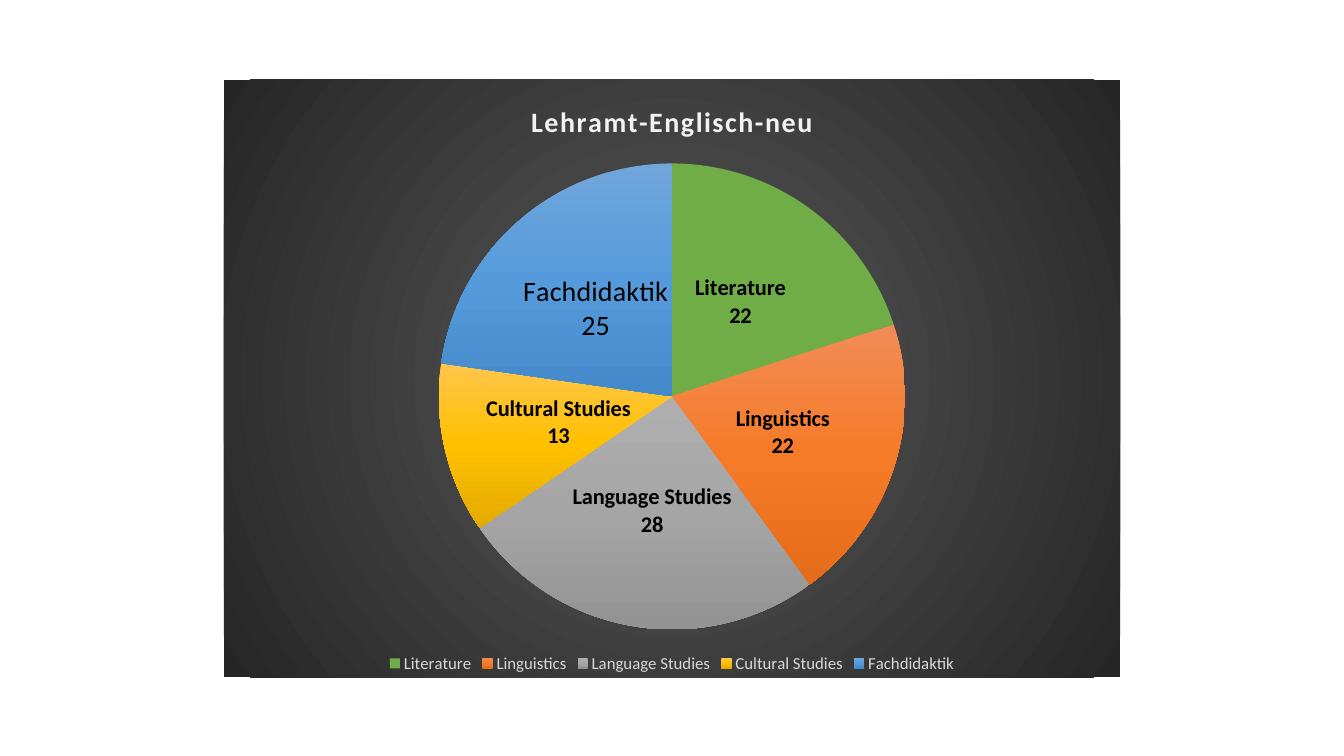
from dataclasses import dataclass

from pptx import Presentation
from pptx.chart.data import CategoryChartData
from pptx.dml.color import RGBColor
from pptx.enum.chart import XL_CHART_TYPE, XL_LABEL_POSITION, XL_LEGEND_POSITION
from pptx.oxml import parse_xml
from pptx.oxml.ns import nsdecls
from pptx.util import Inches, Pt

PIE = XL_CHART_TYPE.PIE
LABEL_CENTER = XL_LABEL_POSITION.CENTER
LEGEND_BOTTOM = XL_LEGEND_POSITION.BOTTOM


@dataclass(frozen=True)
class Theme:
    font: str = "Calibri"
    title_color: str = "F2F2F2"
    legend_color: str = "D9D9D9"
    label_color: str = "000000"
    backdrop: tuple = ("595959", "262626")
    base_size: int = 10
    legend_size: int = 12
    bold_label_size: int = 16
    label_size: int = 20
    title_size: int = 20
    title_spacing: int = 100


SUBJECTS = [
    ("Literature", 22, ("70AD47",)),
    ("Linguistics", 22, ("F18C57", "F67B28", "E56C19")),
    ("Language Studies", 28, ("AFAFAF", "A5A5A5", "939393")),
    ("Cultural Studies", 13, ("FFC64B", "FFC000", "E3AB00")),
    ("Fachdidaktik", 25, ("71A6DB", "559BDB", "448ACA")),
]
PLAIN_SUBJECT = "Fachdidaktik"
PIE_AREA = {"x": 0.24, "y": 0.14, "w": 0.52, "h": 0.78}
LINEAR = '<a:lin ang="5400000" scaled="0"/>'
RADIAL = ('<a:path path="circle"><a:fillToRect l="50000" t="50000" '
          'r="50000" b="50000"/></a:path>')


def gradient(colors, direction):
    step = 100000 // (len(colors) - 1)
    stops = "".join(
        f'<a:gs pos="{i * step}"><a:srgbClr val="{color}"/></a:gs>'
        for i, color in enumerate(colors)
    )
    return parse_xml(f'<a:gradFill {nsdecls("a")} rotWithShape="1">'
                     f'<a:gsLst>{stops}</a:gsLst>{direction}</a:gradFill>')


class SlideBuilder:
    def __init__(self, slide, theme):
        self.slide = slide
        self.theme = theme

    def style(self, font, size, color, bold=False):
        font.name = self.theme.font
        font.size = Pt(size)
        font.bold = bold
        font.color.rgb = RGBColor.from_string(color)

    def pie(self, title, subjects, left, top, width, height):
        data = CategoryChartData()
        data.categories = [name for name, _, _ in subjects]
        data.add_series("Series 1", [points for _, points, _ in subjects])
        chart = self.slide.shapes.add_chart(
            PIE, Inches(left), Inches(top), Inches(width), Inches(height), data
        ).chart
        self.style(chart.font, self.theme.base_size, self.theme.label_color)
        self.backdrop(chart)
        self.title(chart, title)
        self.legend(chart)
        self.labels(chart)
        for index, subject in enumerate(subjects):
            self.slice(chart, index, *subject)
        self.place_pie(chart)

    def backdrop(self, chart):
        properties = parse_xml(f'<c:spPr {nsdecls("c", "a")}><a:ln><a:noFill/></a:ln></c:spPr>')
        properties.insert(0, gradient(self.theme.backdrop, RADIAL))
        chart.element.xpath("c:chart")[0].addnext(properties)

    def title(self, chart, text):
        chart.has_title = True
        chart.chart_title.include_in_layout = False
        paragraph = chart.chart_title.text_frame.paragraphs[0]
        paragraph.text = text
        run = paragraph.runs[0]
        self.style(run.font, self.theme.title_size, self.theme.title_color, True)
        run._r.get_or_add_rPr().set("spc", str(self.theme.title_spacing))

    def legend(self, chart):
        chart.has_legend = True
        chart.legend.position = LEGEND_BOTTOM
        chart.legend.include_in_layout = False
        self.style(chart.legend.font, self.theme.legend_size, self.theme.legend_color)

    def labels(self, chart):
        chart.plots[0].vary_by_categories = True
        labels = chart.plots[0].series[0].data_labels
        labels.show_category_name = True
        labels.show_value = True
        labels.position = LABEL_CENTER
        self.style(labels.font, self.theme.label_size, self.theme.label_color)
        separator = parse_xml(f'<c:separator {nsdecls("c")}>\n</c:separator>')
        chart.element.xpath(".//c:ser/c:dLbls/c:showBubbleSize")[0].addnext(separator)

    def slice(self, chart, index, name, points, colors):
        point = chart.plots[0].series[0].points[index]
        point.format.line.fill.background()
        if len(colors) == 1:
            point.format.fill.solid()
            point.format.fill.fore_color.rgb = RGBColor.from_string(colors[0])
        else:
            properties = chart.element.xpath(".//c:dPt/c:spPr")[-1]
            properties.insert(0, gradient(colors, LINEAR))
        if name == PLAIN_SUBJECT:
            return
        label = point.data_label
        label.text_frame.text = f"{name}\n{points}"
        label.position = LABEL_CENTER
        for paragraph in label.text_frame.paragraphs:
            for run in paragraph.runs:
                self.style(run.font, self.theme.bold_label_size, self.theme.label_color, True)

    def place_pie(self, chart):
        plot_area = chart.element.xpath(".//c:plotArea")[0]
        for layout in plot_area.xpath("c:layout"):
            plot_area.remove(layout)
        sizes = "".join(f'<c:{key} val="{value}"/>' for key, value in PIE_AREA.items())
        plot_area.insert(0, parse_xml(
            f'<c:layout {nsdecls("c")}><c:manualLayout><c:layoutTarget val="inner"/>'
            f'<c:xMode val="edge"/><c:yMode val="edge"/>{sizes}</c:manualLayout></c:layout>'
        ))


def main():
    presentation = Presentation()
    presentation.slide_width = Inches(13.33)
    presentation.slide_height = Inches(7.5)
    slide = presentation.slides.add_slide(presentation.slide_layouts[6])
    builder = SlideBuilder(slide, Theme())
    builder.pie("Lehramt-Englisch-neu", SUBJECTS, 2.22, 0.79, 8.89, 5.93)
    presentation.save("out.pptx")


if __name__ == "__main__":
    main()
